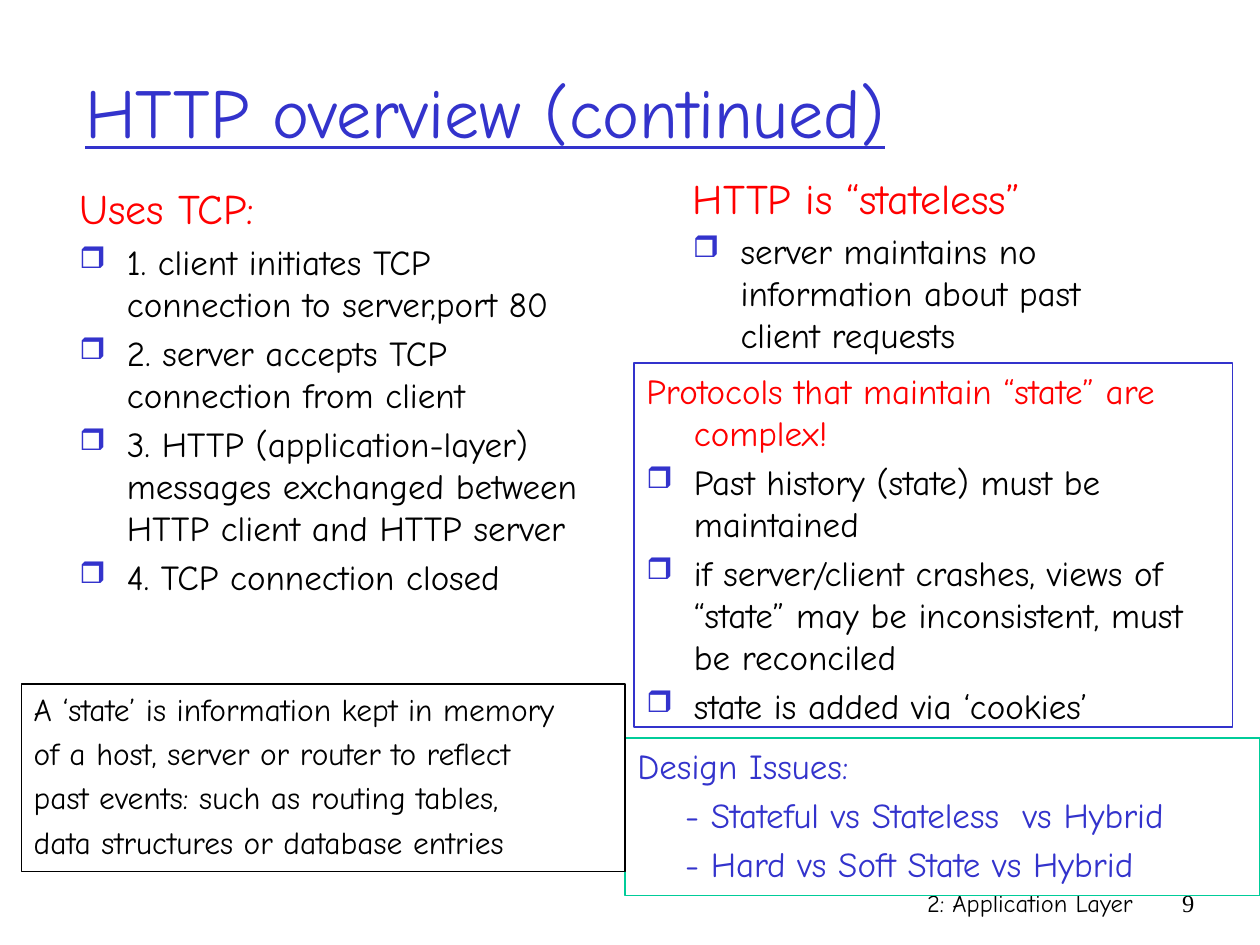
"""Build the slide about HTTP, TCP and state."""
from dataclasses import dataclass
from typing import Optional

from lxml import etree
from pptx import Presentation
from pptx import util as u
from pptx.dml.color import RGBColor
from pptx.enum import shapes, text
from pptx.oxml.ns import qn

BLUE = RGBColor(0x33, 0x33, 0xCC)
RED = RGBColor(0xFF, 0x00, 0x00)
GREEN = RGBColor(0x00, 0xCC, 0x99)
BLACK = RGBColor(0x00, 0x00, 0x00)
WHITE = RGBColor(0xFF, 0xFF, 0xFF)
COMIC = "Comic Neue"
SERIF = "Times New Roman"
HANG = u.Cm(0.96)


@dataclass(frozen=True)
class Style:
    size: int
    color: RGBColor = BLACK
    font: str = COMIC
    left: int = HANG
    first: int = -HANG
    space: int = 20
    bullet: bool = False
    underline: bool = False
    align: text.PP_ALIGN = text.PP_ALIGN.LEFT


@dataclass(frozen=True)
class Block:
    left: float
    top: float
    width: float
    height: float
    lines: tuple[tuple[str, Style], ...]
    outline: Optional[RGBColor] = None
    anchor: text.MSO_ANCHOR = text.MSO_ANCHOR.TOP


def plain(size: int, **options) -> Style:
    return Style(size, left=0, first=0, space=0, **options)


def group(style: Style, *lines: str) -> tuple[tuple[str, Style], ...]:
    return tuple((line, style) for line in lines)


TITLE = plain(40, color=BLUE, underline=True)
FOOTER = plain(14, align=text.PP_ALIGN.RIGHT)
NUMBER = plain(14, font=SERIF, align=text.PP_ALIGN.RIGHT)
HEADING = Style(24, RED)
WARNING = Style(20, RED)
ITEM = Style(20, bullet=True)
ISSUE = Style(20, BLUE)
CHOICE = Style(20, BLUE, first=0)
DEFINITION = Style(18)

BLOCKS = (
    Block(15.04, 17.78, 8.05, 1.27, group(FOOTER, "2: Application Layer")),
    Block(23.06, 17.78, 1.27, 1.27, group(NUMBER, "9")),
    Block(1.47, 0.64, 21.59, 3.18, group(TITLE, "HTTP overview (continued)"),
          anchor=text.MSO_ANCHOR.MIDDLE),
    Block(1.35, 3.56, 11.02, 12.9,
          group(HEADING, "Uses TCP:")
          + group(ITEM,
                  "1. client initiates TCP connection to server,port 80",
                  "2. server accepts TCP connection from client",
                  "3. HTTP (application-layer) messages exchanged between "
                  "HTTP client and HTTP server",
                  "4. TCP connection closed")),
    Block(13.72, 3.35, 8.81, 4.22,
          group(HEADING, "HTTP is “stateless”")
          + group(ITEM, "server maintains no information about past client requests")),
    Block(12.78, 7.32, 12.07, 7.34,
          group(WARNING, "Protocols that maintain “state” are complex!")
          + group(ITEM,
                  "Past history (state) must be maintained",
                  "if server/client crashes, views of “state” may be "
                  "inconsistent, must be reconciled",
                  "state is added via ‘cookies’"),
          outline=BLUE),
    Block(12.6, 14.88, 12.8, 3.18,
          group(ISSUE, "Design Issues:")
          + group(CHOICE, "- Stateful vs Stateless  vs Hybrid",
                  "- Hard vs Soft State vs Hybrid"),
          outline=GREEN),
    Block(0.43, 13.79, 12.17, 3.78,
          group(DEFINITION,
                "A ‘state’ is information kept in memory",
                "of a host, server or router to reflect",
                "past events: such as routing tables,",
                "data structures or database entries"),
          outline=BLACK),
)


def add_child(parent, tag: str, **attributes: str):
    return etree.SubElement(parent, qn(tag), attributes)


def style_paragraph(para, style: Style) -> None:
    para.alignment = style.align
    properties = para._p.get_or_add_pPr()
    properties.set("marL", str(int(style.left)))
    properties.set("indent", str(int(style.first)))
    before = add_child(properties, "a:spcBef")
    add_child(before, "a:spcPct", val=str(style.space * 1000))
    if style.bullet:
        color = add_child(properties, "a:buClr")
        add_child(color, "a:srgbClr", val=str(BLUE))
        add_child(properties, "a:buSzPct", val="85000")
        add_child(properties, "a:buChar", char="❒")
    font = para.font
    font.name, font.size = style.font, u.Pt(style.size)
    font.underline = style.underline
    font.color.rgb = style.color


def add_block(page, block: Block) -> None:
    area = [u.Cm(n) for n in (block.left, block.top, block.width, block.height)]
    if block.outline is None:
        box = page.shapes.add_textbox(*area)
    else:
        box = page.shapes.add_shape(shapes.MSO_SHAPE.RECTANGLE, *area)
        box.shadow.inherit = False
        box.fill.background()
        box.line.color.rgb = block.outline
        box.line.width = u.Pt(0.75)
    frame = box.text_frame
    frame.word_wrap = True
    frame.vertical_anchor = block.anchor
    for index, (line, style) in enumerate(block.lines):
        para = frame.add_paragraph() if index else frame.paragraphs[0]
        para.text = line
        style_paragraph(para, style)


def main() -> None:
    deck = Presentation()
    deck.slide_width, deck.slide_height = u.Cm(25.4), u.Cm(19.05)
    page = deck.slides.add_slide(deck.slide_layouts[6])
    page.background.fill.solid()
    page.background.fill.fore_color.rgb = WHITE
    for block in BLOCKS:
        add_block(page, block)
    deck.save("out.pptx")


if __name__ == "__main__":
    main()
